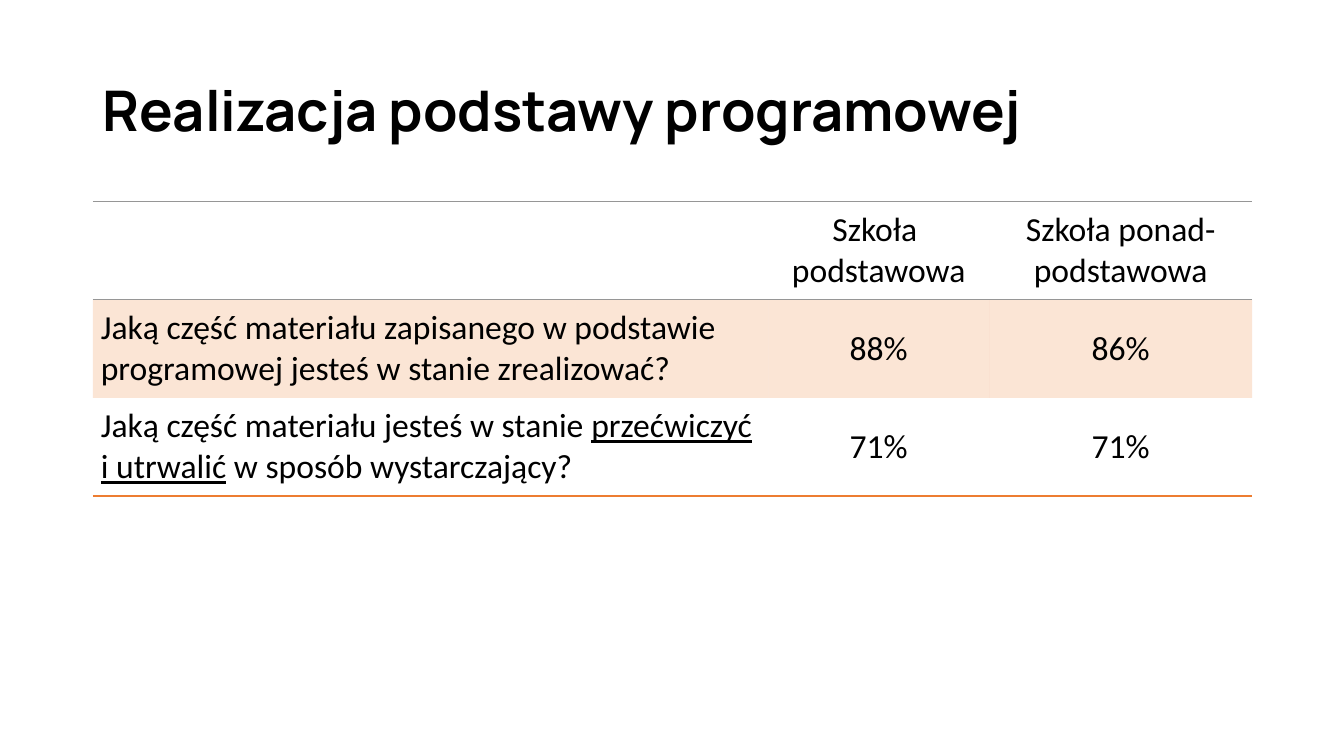
import pptx
import pptx.util
import pptx.oxml
import pptx.oxml.ns
from pptx.dml.color import RGBColor
from pptx.enum.text import MSO_ANCHOR, PP_ALIGN

# Content: each cell is a list of (text, underlined) runs; "\v" is a line break
TITLE = "Realizacja podstawy programowej"
ROWS = [
    [[],
     [("Szkoła ", False), ("\v", False), ("podstawowa", False)],
     [("Szkoła ponad-podstawowa", False)]],
    [[("Jaką część materiału zapisanego w podstawie programowej "
       "jesteś w stanie zrealizować?", False)],
     [("88%", False)],
     [("86%", False)]],
    [[("Jaką część materiału jesteś w stanie ", False),
      ("przećwiczyć i utrwalić", True),
      (" w sposób wystarczający?", False)],
     [("71%", False)],
     [("71%", False)]],
]

# Layout in inches
SLIDE_WIDTH, SLIDE_HEIGHT = 13.33, 7.5
LEFT, CONTENT_WIDTH = 0.92, 11.5
TITLE_TOP, TITLE_HEIGHT = 0.4, 1.45
TABLE_TOP, ROW_HEIGHT, CELL_MARGIN = 2, 0.97, 0.08
COLUMN_WIDTHS = [6.7, 2.19, 2.61]

BLACK = RGBColor(0x00, 0x00, 0x00)
ORANGE = RGBColor(0xED, 0x7D, 0x31)
GRAY = RGBColor(0x96, 0x96, 0x96)
BAND_ALPHA = 20000
PLAIN_TABLE_STYLE = "{2D5ABB26-0587-4C30-8999-92F81FD0307C}"

# Rules above and below each row: (colour, points) or None
HEADER_RULE, FOOT_RULE = (GRAY, 0.75), (ORANGE, 1.5)
ROW_RULES = [(HEADER_RULE, HEADER_RULE), (HEADER_RULE, None), (None, FOOT_RULE)]

inches = pptx.util.Inches


def write_text(frame, runs, *, font, size, bold=False,
               align=PP_ALIGN.LEFT, spacing=1.0):
    paragraph = frame.paragraphs[0]
    paragraph.alignment = align
    paragraph.line_spacing = spacing
    paragraph.font.size = pptx.util.Pt(size)
    for text, underlined in runs:
        if text == "\v":
            paragraph.add_line_break()
            continue
        run = paragraph.add_run()
        run.text = text
        run.font.name = font
        run.font.size = pptx.util.Pt(size)
        run.font.bold = bold
        run.font.underline = underlined
        run.font.color.rgb = BLACK


def set_borders(cell, top, bottom):
    properties = cell._tc.get_or_add_tcPr()
    sides = [("lnL", None), ("lnR", None), ("lnT", top), ("lnB", bottom)]
    for position, (side, rule) in enumerate(sides):
        width, fill = 0, "<a:noFill/>"
        if rule:
            width = pptx.util.Pt(rule[1])
            fill = f'<a:solidFill><a:srgbClr val="{rule[0]}"/></a:solidFill>'
        line = pptx.oxml.parse_xml(
            f'<a:{side} {pptx.oxml.ns.nsdecls("a")} w="{width}">{fill}</a:{side}>')
        properties.insert(position, line)


presentation = pptx.Presentation()
presentation.slide_width = inches(SLIDE_WIDTH)
presentation.slide_height = inches(SLIDE_HEIGHT)
slide = presentation.slides.add_slide(presentation.slide_layouts[5])

# Title
title = slide.shapes.title
title.left, title.top = inches(LEFT), inches(TITLE_TOP)
title.width, title.height = inches(CONTENT_WIDTH), inches(TITLE_HEIGHT)
title.text_frame.vertical_anchor = MSO_ANCHOR.MIDDLE
write_text(title.text_frame, [(TITLE, False)], font="Manrope", size=40,
           bold=True, spacing=0.9)

# Table
table_shape = slide.shapes.add_table(
    len(ROWS), len(COLUMN_WIDTHS), inches(LEFT), inches(TABLE_TOP),
    inches(CONTENT_WIDTH), inches(ROW_HEIGHT * len(ROWS)))
table = table_shape.table
table.first_row = table.horz_banding = False
table._tbl.tblPr.find(pptx.oxml.ns.qn("a:tableStyleId")).text = PLAIN_TABLE_STYLE
for column, width in zip(table.columns, COLUMN_WIDTHS):
    column.width = inches(width)

# Cells
for row_index, row in enumerate(ROWS):
    table.rows[row_index].height = inches(ROW_HEIGHT)
    for column_index, runs in enumerate(row):
        cell = table.cell(row_index, column_index)
        is_question = column_index == 0
        cell.margin_left = cell.margin_right = inches(CELL_MARGIN)
        cell.margin_top = cell.margin_bottom = inches(CELL_MARGIN)
        cell.vertical_anchor = MSO_ANCHOR.BOTTOM if is_question else MSO_ANCHOR.MIDDLE
        write_text(cell.text_frame, runs, font="Calibri", size=24,
                   align=PP_ALIGN.LEFT if is_question else PP_ALIGN.CENTER)
        if row_index == 1:
            cell.fill.solid()
            cell.fill.fore_color.rgb = ORANGE
            color = cell._tc.tcPr.find(".//" + pptx.oxml.ns.qn("a:srgbClr"))
            color.append(pptx.oxml.parse_xml(
                f'<a:alpha {pptx.oxml.ns.nsdecls("a")} val="{BAND_ALPHA}"/>'))
        else:
            cell.fill.background()
        set_borders(cell, *ROW_RULES[row_index])

presentation.save("out.pptx")
